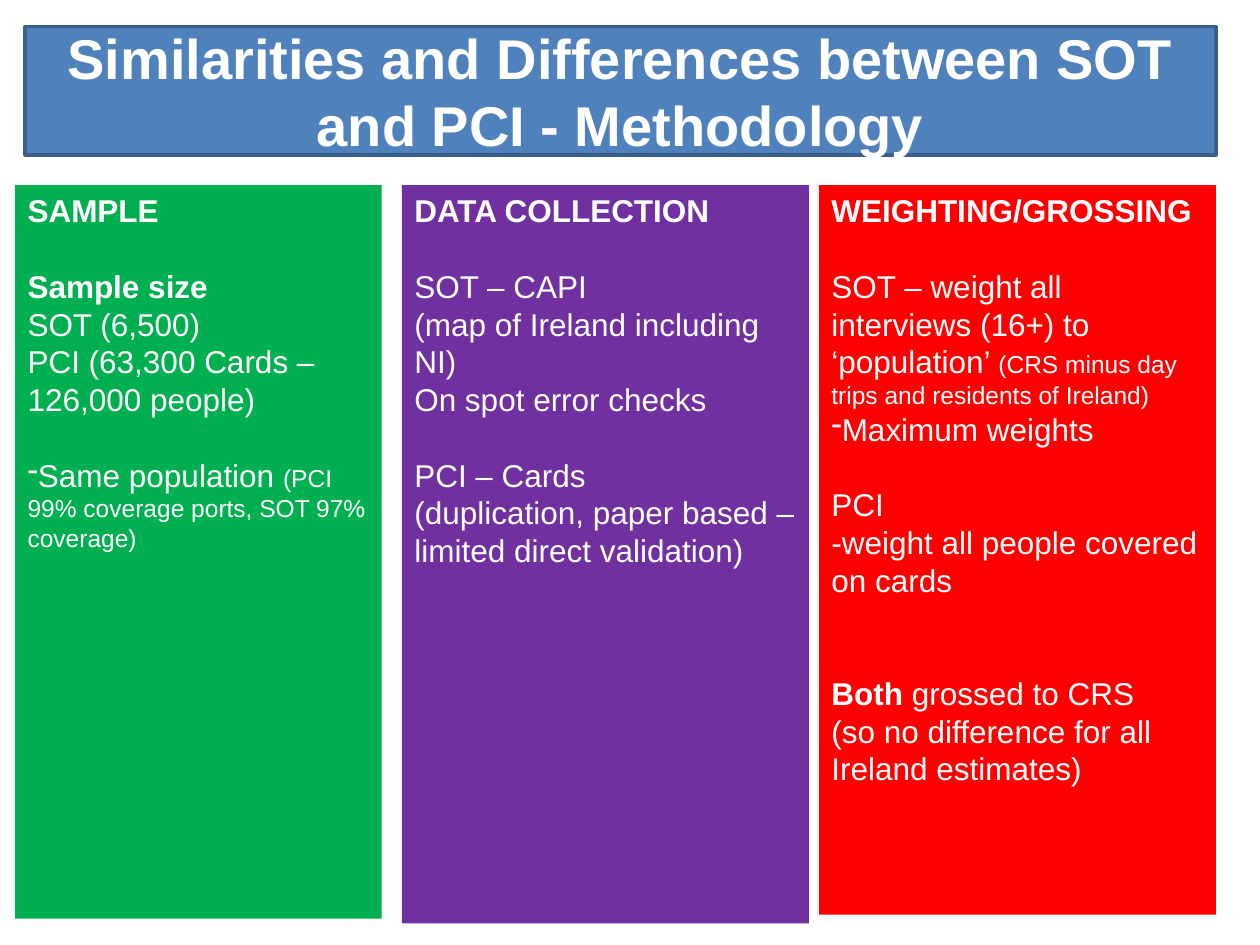
from lxml import etree
from pptx import Presentation
from pptx import util as u
from pptx.dml.color import RGBColor
from pptx.enum import shapes, text
from pptx.oxml.ns import qn

# Content: each paragraph is (blank lines before, bullet, runs); each run is (words, size, bold)
HEADING = "Similarities and Differences between SOT and PCI - Methodology"
BODY, SMALL, LINE = 18, 14, 21.5


def para(words, gap=0, bold=False, bullet=None, aside=None):
    runs = [(words, BODY, bold)]
    if aside:
        runs.append((aside, SMALL, False))
    return gap, bullet, runs


SAMPLE = [
    para("SAMPLE", bold=True),
    para("Sample size", gap=1, bold=True),
    para("SOT (6,500)"),
    para("PCI (63,300 Cards – 126,000 people)"),
    para("Same population ", gap=1, bullet="-",
         aside="(PCI 99% coverage ports, SOT 97% coverage)"),
]
COLLECTION = [
    para("DATA COLLECTION", bold=True),
    para("SOT – CAPI", gap=1),
    para("(map of Ireland including NI)"),
    para("On spot error checks"),
    para("PCI – Cards", gap=1),
    para("(duplication, paper based – limited direct validation)"),
]
WEIGHTING = [
    para("WEIGHTING/GROSSING", bold=True),
    para("SOT – weight all interviews (16+) to ‘population’ ", gap=1,
         aside="(CRS minus day trips and residents of Ireland)"),
    para("Maximum weights", bullet="-"),
    para("PCI", gap=1),
    para("-weight all people covered on cards"),
    (2, None, [("Both", BODY, True), (" grossed to CRS", BODY, False)]),
    para("(so no difference for all Ireland estimates)"),
]

# Layout in inches: left, width, height of each column under a shared top
COLUMN_TOP = 1.47
COLUMNS = [
    (0.12, 2.91, 5.82, "00B050", SAMPLE),
    (3.19, 3.23, 5.86, "7030A0", COLLECTION),
    (6.5, 3.15, 5.79, "FF0000", WEIGHTING),
]


def color(value):
    return RGBColor.from_string(value)


def apply(target, values):
    for name, value in values.items():
        setattr(target, name, value)


def paint(box, fill):
    box.fill.solid()
    box.fill.fore_color.rgb = color(fill)


def add_run(paragraph, words, size, bold):
    run = paragraph.add_run()
    run.text = words
    apply(run.font, {"name": "Arial", "size": u.Pt(size), "bold": bold})
    run.font.color.rgb = color("FFFFFF")


def add_bullet(paragraph, mark):
    properties = paragraph._p.get_or_add_pPr()
    properties.set("marL", "0")
    properties.set("indent", "0")
    etree.SubElement(properties, qn("a:buChar")).set("char", mark)


def write(frame, paragraphs):
    for index, (gap, bullet, runs) in enumerate(paragraphs):
        paragraph = frame.add_paragraph() if index else frame.paragraphs[0]
        apply(paragraph, {"alignment": text.PP_ALIGN.LEFT, "space_before": u.Pt(gap * LINE)})
        if bullet:
            add_bullet(paragraph, bullet)
        for run in runs:
            add_run(paragraph, *run)


def main():
    deck = Presentation()
    apply(deck, {"slide_width": u.Inches(10), "slide_height": u.Inches(7.5)})
    slide = deck.slides.add_slide(deck.slide_layouts[5])

    # Title banner
    title = slide.shapes.title
    apply(title, {"left": u.Inches(0.2), "top": u.Inches(0.21),
                  "width": u.Inches(9.45), "height": u.Inches(1.02)})
    paint(title, "4F81BD")
    title.line.color.rgb = color("3A5F8C")
    title.line.width = u.Pt(2)
    apply(title.text_frame, {"word_wrap": True, "auto_size": text.MSO_AUTO_SIZE.NONE,
                             "vertical_anchor": text.MSO_ANCHOR.MIDDLE})
    banner = title.text_frame.paragraphs[0]
    banner.alignment = text.PP_ALIGN.CENTER
    add_run(banner, HEADING, 32, True)

    # Three topic columns
    for left, width, height, fill, paragraphs in COLUMNS:
        column = slide.shapes.add_shape(
            shapes.MSO_SHAPE.RECTANGLE, u.Inches(left), u.Inches(COLUMN_TOP),
            u.Inches(width), u.Inches(height))
        column.shadow.inherit = False
        paint(column, fill)
        column.line.fill.background()
        apply(column.text_frame, {"word_wrap": True, "vertical_anchor": text.MSO_ANCHOR.TOP})
        write(column.text_frame, paragraphs)

    deck.save("out.pptx")


if __name__ == "__main__":
    main()
